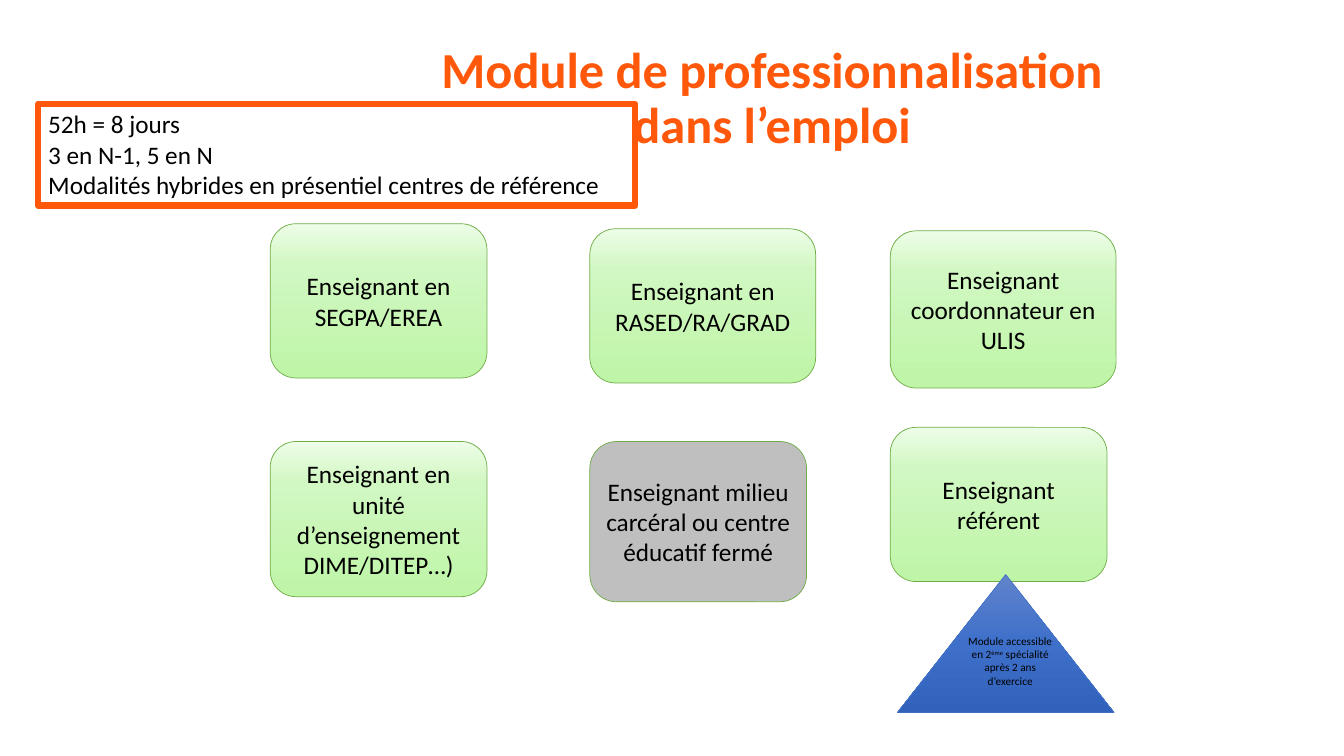
"""Build the slide on the professional training modules for specialised teachers."""
from copy import deepcopy

from pptx import Presentation
from pptx.dml.color import RGBColor
from pptx.enum.shapes import MSO_SHAPE
from pptx.enum.text import MSO_ANCHOR, PP_ALIGN
from pptx.oxml.ns import qn
from pptx.util import Inches, Pt

ORANGE = "FF580B"
GREEN_STOPS = [(0, "BEF5A7"), (0.73, "D1F7C2"), (1, "EDFDE7")]
BLUE_STOPS = [(0, "6183CB"), (0.5, "3E70CA"), (1, "3062BB")]

deck = Presentation()
deck.slide_width = Inches(13.33)
deck.slide_height = Inches(7.5)
page = deck.slides.add_slide(deck.slide_layouts[6])


def color(value):
    return RGBColor.from_string(value)


def write(box, text, size, align, anchor, ink="000000", bold=False):
    frame = box.text_frame
    frame.text = text
    frame.word_wrap = True
    frame.vertical_anchor = anchor
    for para in frame.paragraphs:
        para.alignment = align
        for span in para.runs:
            span.font.name = "Calibri"
            span.font.size = Pt(size)
            span.font.bold = bold
            span.font.color.rgb = color(ink)


title = page.shapes.add_textbox(Inches(3.88), Inches(0.28), Inches(7.56), Inches(1.42))
write(title, "Module de professionnalisation dans l’emploi", 36,
      PP_ALIGN.CENTER, MSO_ANCHOR.MIDDLE, ORANGE, True)
title.text_frame.paragraphs[0].line_spacing = 0.9

ROUNDED = MSO_SHAPE.ROUNDED_RECTANGLE
shapes = [
    (ROUNDED, 2.68, 2.22, 2.15, 1.53, GREEN_STOPS, "Enseignant en SEGPA/EREA"),
    (ROUNDED, 8.83, 4.24, 2.15, 1.53, GREEN_STOPS, "Enseignant référent"),
    (ROUNDED, 5.85, 4.38, 2.15, 1.59, None,
     "Enseignant milieu carcéral ou centre éducatif fermé"),
    (ROUNDED, 2.68, 4.38, 2.15, 1.54, GREEN_STOPS,
     "Enseignant en unité d’enseignement DIME/DITEP…)"),
    (ROUNDED, 5.85, 2.27, 2.24, 1.53, GREEN_STOPS, "Enseignant en RASED/RA/GRAD"),
    (ROUNDED, 8.83, 2.29, 2.24, 1.56, GREEN_STOPS, "Enseignant coordonnateur en ULIS"),
    (MSO_SHAPE.ISOSCELES_TRIANGLE, 8.9, 5.7, 2.15, 1.37, BLUE_STOPS, ""),
]
for kind, left, top, width, height, stops, text in shapes:
    box = page.shapes.add_shape(kind, Inches(left), Inches(top), Inches(width), Inches(height))
    box.shadow.inherit = False
    box.line.width = Pt(0.5)
    box.line.color.rgb = color("70AD47" if kind == ROUNDED else "4472C4")
    if stops:
        box.fill.gradient()
        box.fill.gradient_angle = 90 if kind == ROUNDED else 270
        stop_list = box._element.spPr.find(qn("a:gradFill")).find(qn("a:gsLst"))
        stop_list.append(deepcopy(stop_list[-1]))
        for stop, (position, shade) in zip(box.fill.gradient_stops, stops):
            stop.position = position
            stop.color.rgb = color(shade)
    else:
        box.fill.solid()
        box.fill.fore_color.rgb = color("BFBFBF")
    if text:
        write(box, text, 18, PP_ALIGN.CENTER, MSO_ANCHOR.MIDDLE)
        box.text_frame.margin_left = box.text_frame.margin_right = Inches(0.08)

access = page.shapes.add_textbox(Inches(9.5), Inches(6.24), Inches(1.04), Inches(0.64))
write(access, "Module accessible en 2", 8, PP_ALIGN.CENTER, MSO_ANCHOR.TOP)
note = access.text_frame.paragraphs[0]
for text in ("ème", " spécialité après 2 ans d’exercice"):
    span = note.add_run()
    span.text = text
    span.font.name = "Calibri"
    span.font.size = Pt(8)
    span.font.color.rgb = color("000000")
note.runs[1].font._element.set("baseline", "30000")

schedule = page.shapes.add_shape(
    MSO_SHAPE.RECTANGLE, Inches(0.38), Inches(1.03), Inches(5.92), Inches(1.01))
schedule.shadow.inherit = False
schedule.fill.background()
schedule.line.color.rgb = color(ORANGE)
schedule.line.width = Pt(4.5)
write(schedule,
      "52h = 8 jours\n3 en N-1, 5 en N\nModalités hybrides en présentiel centres de référence",
      18, PP_ALIGN.LEFT, MSO_ANCHOR.TOP)

deck.save("out.pptx")
